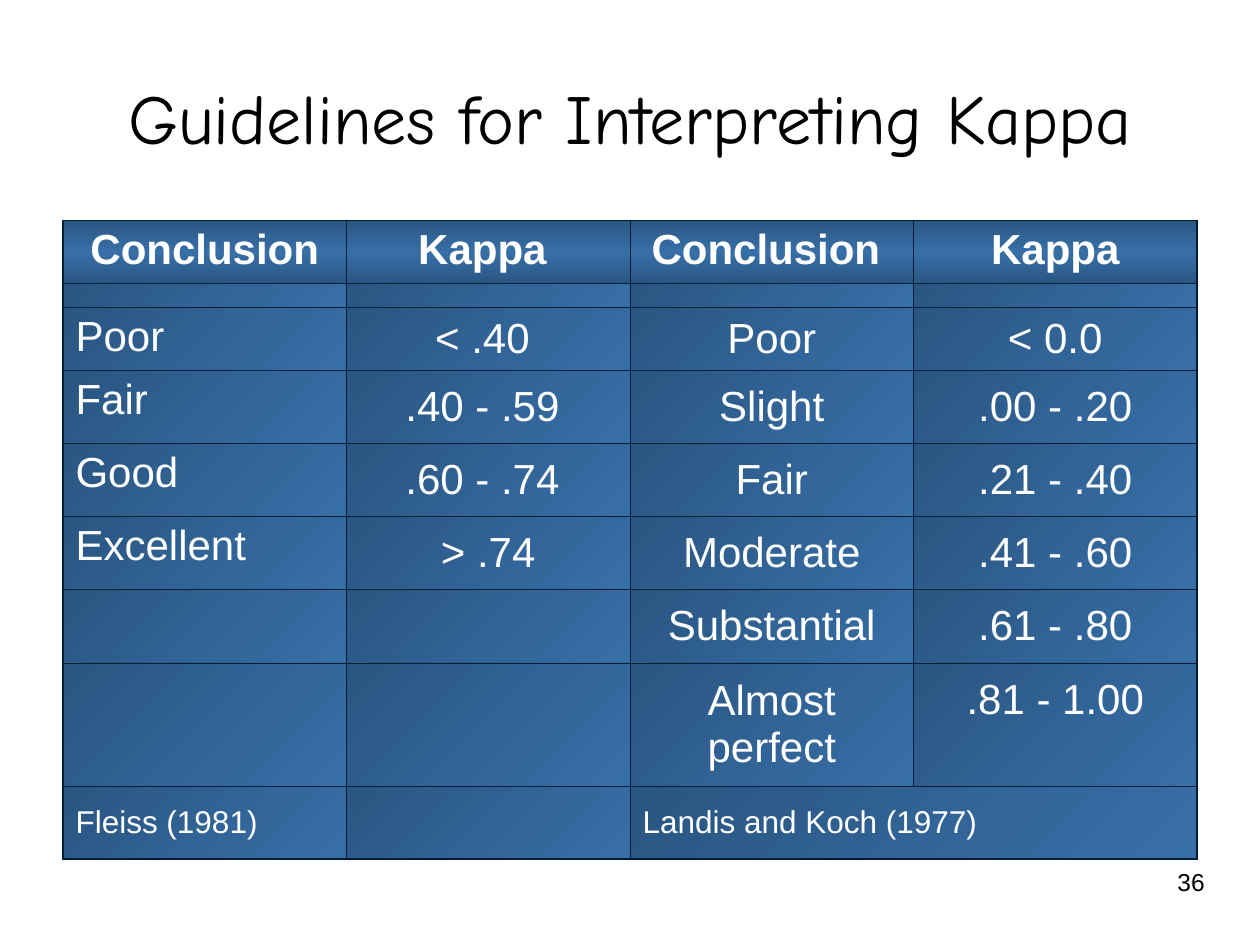
from lxml.etree import SubElement
from pptx import Presentation
from pptx.dml.color import RGBColor
from pptx.enum.text import MSO_ANCHOR as Anchor, PP_ALIGN as Align
from pptx.oxml.ns import qn
from pptx.util import Pt

PX = 9144
BLACK = RGBColor(0x00, 0x00, 0x00)
WHITE = RGBColor(0xFF, 0xFF, 0xFF)
DARK_BLUE = RGBColor(0x2A, 0x56, 0x82)
BLUE = RGBColor(0x37, 0x6F, 0xA7)
NAVY = RGBColor(0x00, 0x1D, 0x3A)

HEADER_STOPS = ((0, DARK_BLUE), (50, BLUE), (100, DARK_BLUE))
BODY_STOPS = ((0, DARK_BLUE), (100, BLUE))
ROW_HEIGHTS = (50, 19, 50, 58, 58, 58, 58, 98, 58)
GUIDELINES = (
    ("Conclusion", "Kappa ", "Conclusion ", "Kappa"),
    ("", "", "", ""),
    ("Poor", "< .40 ", "Poor", "< 0.0"),
    ("Fair", ".40 - .59 ", "Slight", ".00 - .20"),
    ("Good", ".60 - .74 ", "Fair", ".21 - .40"),
    ("Excellent", "> .74", "Moderate", ".41 - .60"),
    ("", "", "Substantial", ".61 - .80"),
    ("", "", "Almost perfect", ".81 - 1.00"),
    ("Fleiss (1981)", "", "Landis and Koch (1977)", ""),
)


class SlideBuilder:
    """Holds the fonts and the current slide, and adds styled elements to it."""

    title_font = "Comic Neue"
    body_font = "Arial"

    def __init__(self, presentation):
        self.slide = presentation.slides.add_slide(presentation.slide_layouts[5])

    def set_text(self, frame, text, size, color, align, font=body_font, bold=False):
        frame.text = text
        paragraph = frame.paragraphs[0]
        paragraph.alignment = align
        paragraph.font.name = font
        paragraph.font.size = Pt(size)
        paragraph.font.bold = bold
        paragraph.font.color.rgb = color

    def title(self, text, left, top, width, height):
        shape = self.slide.shapes.title
        shape.left, shape.top = left * PX, top * PX
        shape.width, shape.height = width * PX, height * PX
        shape.text_frame.vertical_anchor = Anchor.MIDDLE
        self.set_text(shape.text_frame, text, 40, BLACK, Align.CENTER, self.title_font)

    def label(self, text, left, top, width, height):
        box = self.slide.shapes.add_textbox(left * PX, top * PX, width * PX, height * PX)
        box.text_frame.word_wrap = True
        self.set_text(box.text_frame, text, 14, BLACK, Align.RIGHT)

    def paint(self, cell, stops, angle, borders):
        properties = cell._tc.get_or_add_tcPr()
        for side, width in borders.items():
            line = SubElement(properties, qn(f"a:ln{side}"), w=str(Pt(width)))
            fill = SubElement(line, qn("a:solidFill"))
            SubElement(fill, qn("a:srgbClr"), val=str(NAVY))
        gradient = SubElement(properties, qn("a:gradFill"))
        stop_list = SubElement(gradient, qn("a:gsLst"))
        for position, color in stops:
            stop = SubElement(stop_list, qn("a:gs"), pos=str(position * 1000))
            SubElement(stop, qn("a:srgbClr"), val=str(color))
        SubElement(gradient, qn("a:lin"), ang=str(angle * 60000), scaled="0")

    def table(self, rows, heights, left, top, width):
        row_count, column_count = len(rows), len(rows[0])
        table = self.slide.shapes.add_table(
            row_count, column_count, left * PX, top * PX, width * PX, sum(heights) * PX
        ).table
        last_row = row_count - 1
        table.cell(last_row, 2).merge(table.cell(last_row, 3))
        for row, (values, height) in enumerate(zip(rows, heights)):
            table.rows[row].height = height * PX
            for column, text in enumerate(values):
                cell = table.cell(row, column)
                header, footer = row == 0, row == last_row
                centered = header or (column > 0 and not footer)
                size = 18 if footer else 24 if text else 6
                self.set_text(cell.text_frame, text, size, WHITE,
                              Align.CENTER if centered else Align.LEFT, bold=header)
                cell.margin_left = cell.margin_right = 10 * PX
                cell.margin_top = cell.margin_bottom = (5 if text else 0) * PX
                top_aligned = header or (column == 0 and not footer)
                cell.vertical_anchor = Anchor.TOP if top_aligned else Anchor.MIDDLE
                right_edge = column + cell.span_width == column_count
                self.paint(
                    cell,
                    HEADER_STOPS if header else BODY_STOPS,
                    90 if header else 45,
                    {
                        "L": 1 if column == 0 else 0.25,
                        "R": 1 if right_edge else 0.25,
                        "T": 1 if header else 0.25,
                        "B": 1 if footer else 0.25,
                    },
                )
        return table


def main():
    presentation = Presentation()
    presentation.slide_width, presentation.slide_height = 1000 * PX, 750 * PX
    builder = SlideBuilder(presentation)
    builder.title("Guidelines for Interpreting Kappa", 50, 30, 900, 125)
    table = builder.table(GUIDELINES, ROW_HEIGHTS, 50, 175, 900)
    highest_range = table.cell(7, 3)
    highest_range.vertical_anchor = Anchor.TOP
    highest_range.margin_top = 11 * PX
    builder.label("36", 806, 683, 160, 52)
    presentation.save("out.pptx")


if __name__ == "__main__":
    main()
